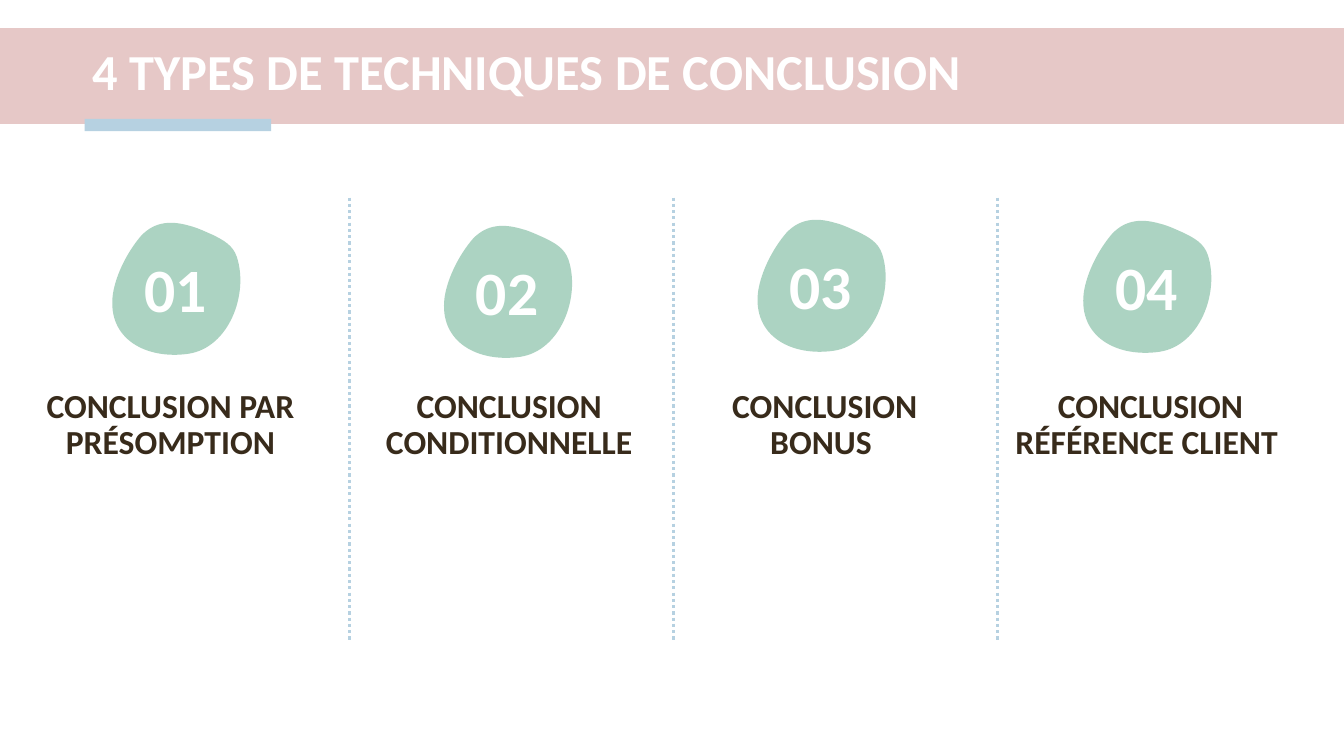
from lxml import etree
from pptx import Presentation
from pptx.dml.color import RGBColor
from pptx.enum.dml import MSO_LINE
from pptx.enum.shapes import MSO_CONNECTOR, MSO_SHAPE
from pptx.enum.text import MSO_ANCHOR, MSO_AUTO_SIZE, PP_ALIGN
from pptx.oxml.ns import qn
from pptx.util import Pt

PX = 9144
WIDE, HIGH = 1333, 750
RECT = MSO_SHAPE.RECTANGLE
LINE = MSO_CONNECTOR.STRAIGHT
DOTS = MSO_LINE.ROUND_DOT
LEFT, MID = PP_ALIGN.LEFT, PP_ALIGN.CENTER
TOP, CENTER = MSO_ANCHOR.TOP, MSO_ANCHOR.MIDDLE
FIXED = MSO_AUTO_SIZE.NONE
FONT = "Calibri"
PINK, BLUE, GREEN = "E6C8C7", "B6D1E1", "94C7B0"
WHITE, BROWN = "FFFFFF", "382B1B"

BLOB = (127, 131)
START = (77, 3)
CURVES = [
    ((60, -2), (43, -2), (29, 13)),
    ((16, 28), (4, 51), (1, 71)),
    ((-5, 116), (35, 136), (76, 130)),
    ((116, 124), (136, 71), (124, 34)),
    ((120, 22), (110, 17), (100, 12)),
    ((93, 9), (85, 5), START),
]

TITLE = "4 TYPES DE TECHNIQUES DE CONCLUSION"
CARDS = [
    ("CONCLUSION PAR PRÉSOMPTION", 23, (111, 221)),
    ("CONCLUSION CONDITIONNELLE", 359, (440, 224)),
    ("CONCLUSION BONUS ", 672, (751, 218)),
    ("CONCLUSION RÉFÉRENCE CLIENT ", 995, (1074, 219)),
]


def px(*sizes):
    """Turn px lengths into EMU."""
    return [size * PX for size in sizes]


def color(code):
    """Turn a hex string into a colour."""
    return RGBColor.from_string(code)


def paint(shape, code):
    """Give a shape a flat fill without line or shadow."""
    shape.shadow.inherit = False
    shape.fill.solid()
    shape.fill.fore_color.rgb = color(code)
    shape.line.fill.background()


def write(shape, text, size, code, align, gap, anchor=TOP):
    """Set and format the one paragraph of a shape."""
    frame = shape.text_frame
    frame.text = text
    frame.word_wrap = True
    frame.auto_size = FIXED
    frame.vertical_anchor = anchor
    para = frame.paragraphs[0]
    para.alignment = align
    para.line_spacing = gap
    font = para.runs[0].font
    font.name, font.size, font.bold = FONT, Pt(size), True
    font.color.rgb = color(code)


def header(slide, x, y, w, h):
    """Draw the title band with its accent bar."""
    band = slide.shapes.add_shape(RECT, *px(x, y, w, h))
    paint(band, PINK)
    accent = slide.shapes.add_shape(RECT, *px(x + 84, y + 90, 185, 12))
    paint(accent, BLUE)
    title = slide.shapes.title
    title.left, title.top, title.width, title.height = px(x + 82, y + 6, 1193, 79)
    write(title, TITLE, 36, WHITE, LEFT, 0.9, CENTER)
    accent.element.addnext(title.element)


def bend(blob):
    """Turn the straight edges of a badge into curves."""
    track = next(blob.element.iter(qn("a:path")))
    for key, size in zip("wh", px(*BLOB)):
        track.set(key, str(size))
    for old in list(track):
        track.remove(old)
    edges = [("a:moveTo", [START])] + [("a:cubicBezTo", c) for c in CURVES]
    for tag, points in edges:
        edge = etree.SubElement(track, qn(tag))
        for point in points:
            x, y = px(*point)
            etree.SubElement(edge, qn("a:pt"), x=str(x), y=str(y))
    etree.SubElement(track, qn("a:close"))


def badge(slide, x, y, text):
    """Draw a numbered badge."""
    pen = slide.shapes.build_freeform(*START, scale=PX)
    pen.add_line_segments([curve[-1] for curve in CURVES], close=True)
    blob = pen.convert_to_shape()
    blob.left, blob.top, blob.width, blob.height = px(x, y, *BLOB)
    bend(blob)
    paint(blob, GREEN)
    tint = blob.element.spPr.find(qn("a:solidFill"))[0]
    etree.SubElement(tint, qn("a:alpha"), val="77000")
    box = slide.shapes.add_textbox(*px(x, y + 64, 126, 105))
    write(box, text, 44, WHITE, MID, Pt(23.4))


def card(slide, x, y, w, h, text):
    """Place the name of a technique."""
    box = slide.shapes.add_textbox(*px(x, y, w, h))
    write(box, text, 24, BROWN, MID, Pt(25.8))


def rule(slide, x, y, h):
    """Draw a dotted divider."""
    line = slide.shapes.add_connector(LINE, *px(x, y, x, y + h))
    line.line.color.rgb = color(BLUE)
    line.line.width = Pt(2.25)
    line.line.dash_style = DOTS
    etree.SubElement(line.element.spPr, qn("a:effectLst"))


def main():
    """Build and save the slide."""
    deck = Presentation()
    deck.slide_width, deck.slide_height = px(WIDE, HIGH)
    slide = deck.slides.add_slide(deck.slide_layouts.get_by_name("Title Only"))
    header(slide, 0, 28, WIDE, 95)
    for number, (text, left, spot) in enumerate(CARDS, 1):
        card(slide, left, 381, 292, 242, text)
        badge(slide, *spot, f"{number:02}")
    for i in range(len(CARDS) - 1):
        rule(slide, 347 + 321 * i, 196, 439)
    deck.save("out.pptx")


if __name__ == "__main__":
    main()
